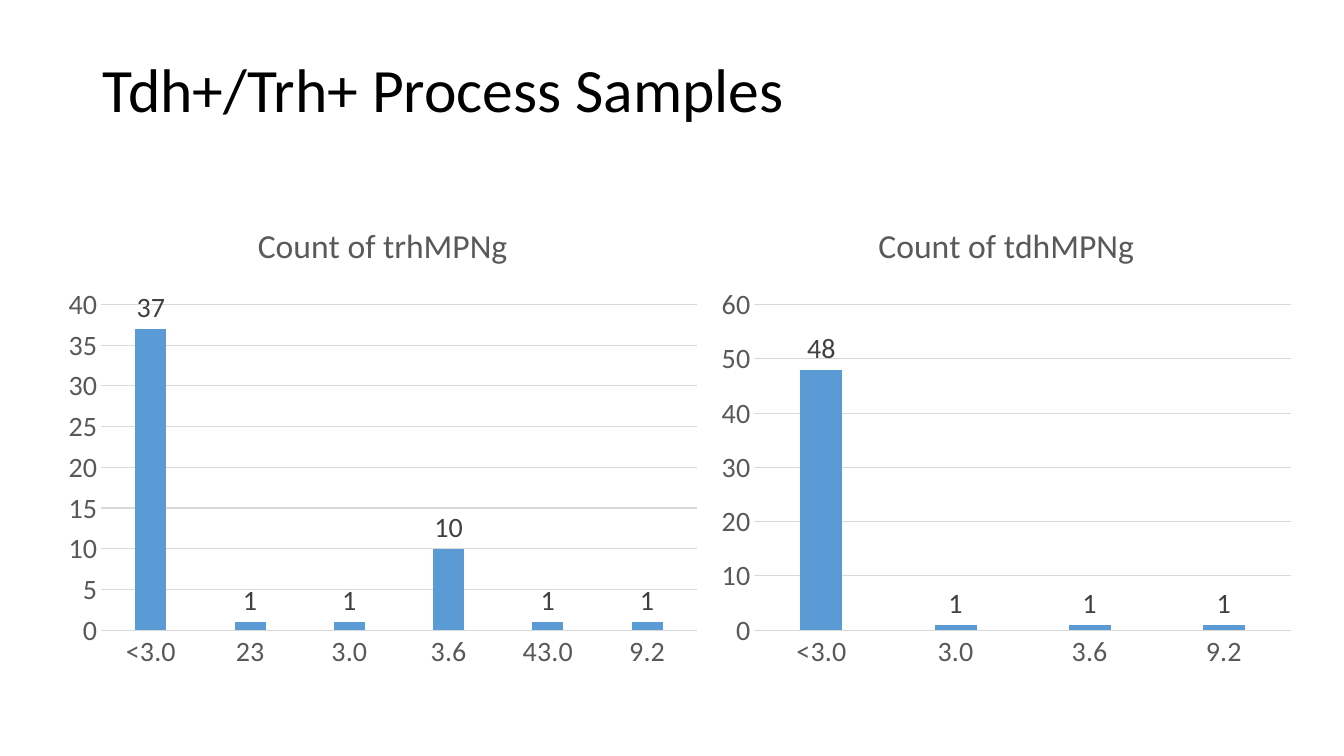
from pptx import Presentation
from pptx.chart.data import CategoryChartData
from pptx.dml.color import RGBColor
from pptx.enum.chart import XL_CHART_TYPE, XL_LABEL_POSITION, XL_TICK_MARK
from pptx.enum.text import MSO_ANCHOR
from pptx.util import Inches, Pt

FONT = "Calibri"
COLORS = {
    "title": "000000",
    "axis_text": "595959",
    "label": "404040",
    "line": "D9D9D9",
    "bar": "5B9BD5",
}


def rgb(name):
    return RGBColor.from_string(COLORS[name])


def style_font(font, size, color):
    font.name = FONT
    font.size = Pt(size)
    font.bold = False
    font.color.rgb = rgb(color)


def style_line(line):
    line.color.rgb = rgb("line")
    line.width = Pt(0.75)


def add_title(s, text):
    box = s.shapes.add_textbox(Inches(0.92), Inches(0.4), Inches(11.5), Inches(1.03))
    tf = box.text_frame
    tf.word_wrap = True
    tf.vertical_anchor = MSO_ANCHOR.MIDDLE
    p = tf.paragraphs[0]
    p.text = text
    p.line_spacing = 0.9
    style_font(p.font, 44, "title")


def style_axes(chart, maximum, step):
    for axis in (chart.category_axis, chart.value_axis):
        axis.major_tick_mark = XL_TICK_MARK.NONE
        axis.minor_tick_mark = XL_TICK_MARK.NONE
        style_font(axis.tick_labels.font, 20, "axis_text")
    style_line(chart.category_axis.format.line)
    values = chart.value_axis
    values.format.line.fill.background()
    values.minimum_scale = 0
    values.maximum_scale = maximum
    values.major_unit = step
    values.has_major_gridlines = True
    style_line(values.major_gridlines.format.line)


def add_count_chart(s, left, width, title, counts, maximum, step):
    data = CategoryChartData()
    data.categories = list(counts)
    data.add_series("Series 1", list(counts.values()))
    chart = s.shapes.add_chart(
        XL_CHART_TYPE.COLUMN_CLUSTERED,
        Inches(left), Inches(2), Inches(width), Inches(4.73), data,
    ).chart
    style_font(chart.font, 20, "title")
    chart.has_legend = False
    chart.has_title = True
    chart.chart_title.include_in_layout = False
    p = chart.chart_title.text_frame.paragraphs[0]
    p.text = title
    style_font(p.font, 24, "axis_text")
    style_axes(chart, maximum, step)

    plot = chart.plots[0]
    plot.gap_width = 219
    plot.overlap = -27
    plot.vary_by_categories = False
    series = plot.series[0]
    series.format.fill.solid()
    series.format.fill.fore_color.rgb = rgb("bar")
    labels = series.data_labels
    labels.show_value = True
    labels.position = XL_LABEL_POSITION.OUTSIDE_END
    style_font(labels.font, 20, "label")


def main():
    prs = Presentation()
    prs.slide_width = Inches(13.33)
    prs.slide_height = Inches(7.5)
    s = prs.slides.add_slide(prs.slide_layouts[6])
    add_title(s, "Tdh+/Trh+ Process Samples")
    trh = {"<3.0": 37, "23": 1, "3.0": 1, "3.6": 10, "43.0": 1, "9.2": 1}
    tdh = {"<3.0": 48, "3.0": 1, "3.6": 1, "9.2": 1}
    add_count_chart(s, 0.55, 6.49, "Count of trhMPNg", trh, 40, 5)
    add_count_chart(s, 7.04, 5.88, "Count of tdhMPNg", tdh, 60, 10)
    prs.save("out.pptx")


if __name__ == "__main__":
    main()
